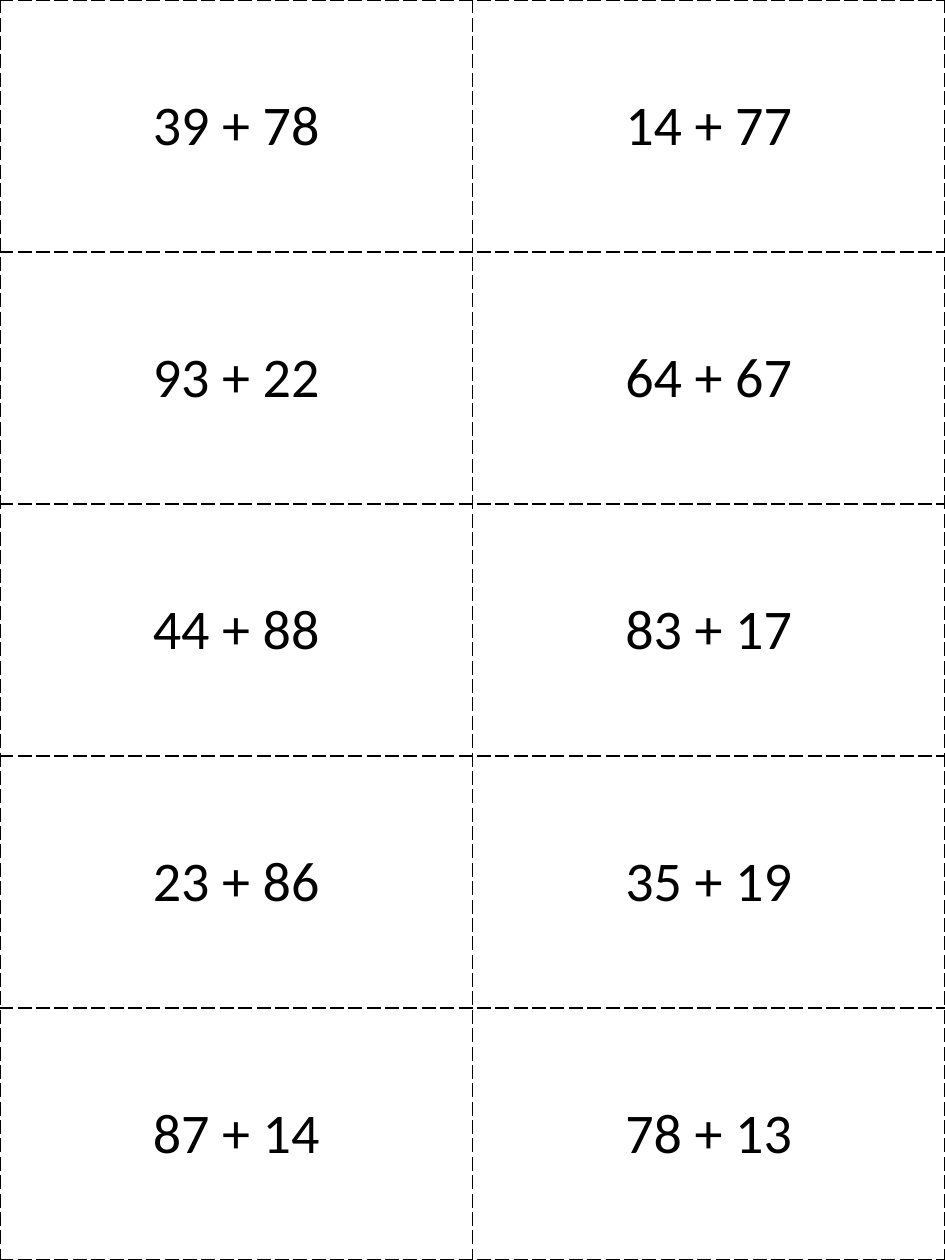
from lxml import etree
from pptx import Presentation
from pptx import util as u
from pptx.dml.color import RGBColor
from pptx.enum import text
from pptx.oxml import ns

SUMS = [
    ("39 + 78", "14 + 77"),
    ("93 + 22", "64 + 67"),
    ("44 + 88", "83 + 17"),
    ("23 + 86", "35 + 19"),
    ("87 + 14", "78 + 13"),
]
PAGE_WIDTH, PAGE_HEIGHT = 540, 720


def colour(value):
    return RGBColor.from_string(value)


class CardSheet:
    ink = "000000"
    paper = "FFFFFF"
    border = {"width": 1, "dash": "lgDash"}
    font = {"name": "Calibri", "size": u.Pt(32), "bold": False}

    def __init__(self, page):
        self.page = page
        page.background.fill.solid()
        page.background.fill.fore_color.rgb = colour(self.paper)

    def add_borders(self, cell):
        properties = cell._tc.get_or_add_tcPr()
        for side in ("lnL", "lnR", "lnT", "lnB"):
            line = etree.SubElement(properties, ns.qn(f"a:{side}"), w=str(u.Pt(self.border["width"])))
            fill = etree.SubElement(line, ns.qn("a:solidFill"))
            etree.SubElement(fill, ns.qn("a:srgbClr"), val=self.ink)
            etree.SubElement(line, ns.qn("a:prstDash"), val=self.border["dash"])

    def fill_card(self, cell, wording):
        self.add_borders(cell)
        cell.fill.background()
        cell.vertical_anchor = text.MSO_ANCHOR.MIDDLE
        para = cell.text_frame.paragraphs[0]
        para.alignment = text.PP_ALIGN.CENTER
        span = para.add_run()
        span.text = wording
        for name, value in self.font.items():
            setattr(span.font, name, value)
        span.font.color.rgb = colour(self.ink)

    def add_cards(self, rows, left, top, width, height):
        frame = self.page.shapes.add_table(
            len(rows), len(rows[0]), u.Pt(left), u.Pt(top), u.Pt(width), u.Pt(height)
        )
        table = frame.table
        for name in ("first_row", "horz_banding"):
            setattr(table, name, False)
        for row, wordings in enumerate(rows):
            for column, wording in enumerate(wordings):
                self.fill_card(table.cell(row, column), wording)


def main():
    deck = Presentation()
    deck.slide_width, deck.slide_height = u.Pt(PAGE_WIDTH), u.Pt(PAGE_HEIGHT)
    sheet = CardSheet(deck.slides.add_slide(deck.slide_layouts[6]))
    sheet.add_cards(SUMS, 0, 0, PAGE_WIDTH, PAGE_HEIGHT)
    deck.save("out.pptx")


if __name__ == "__main__":
    main()
